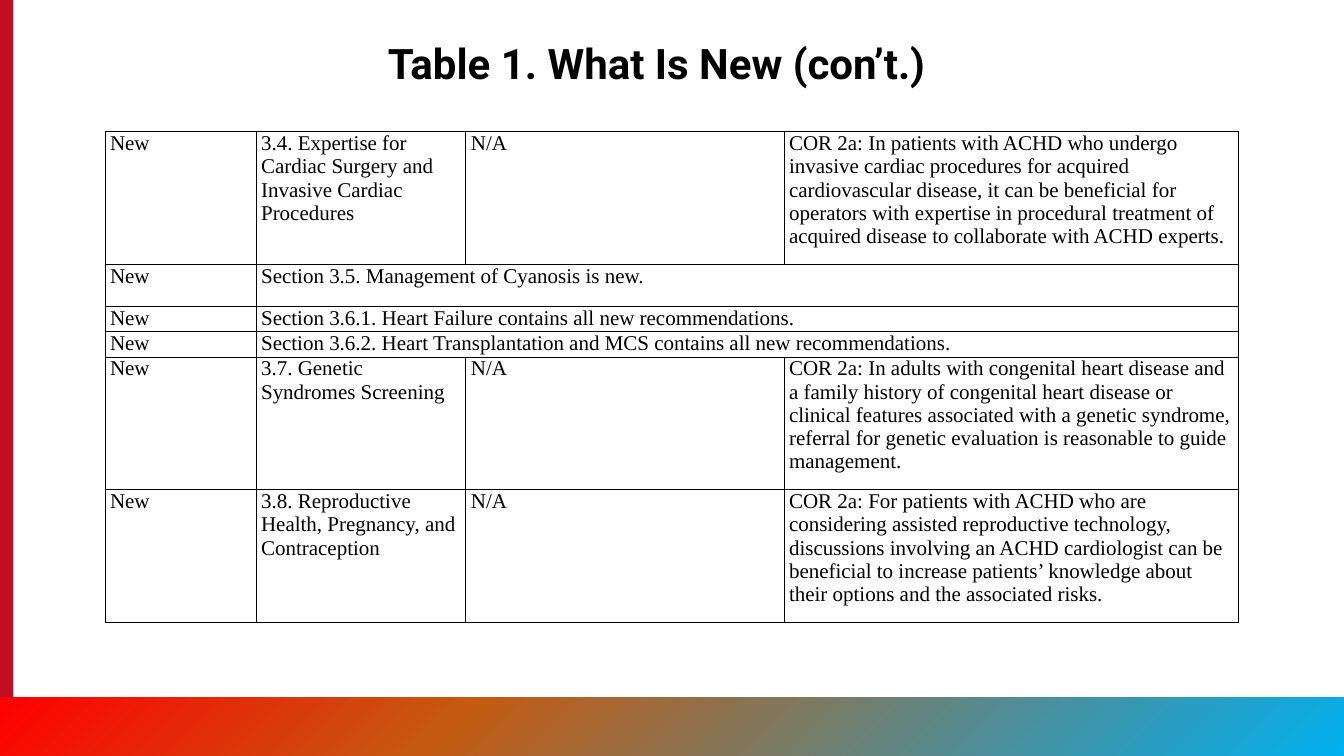
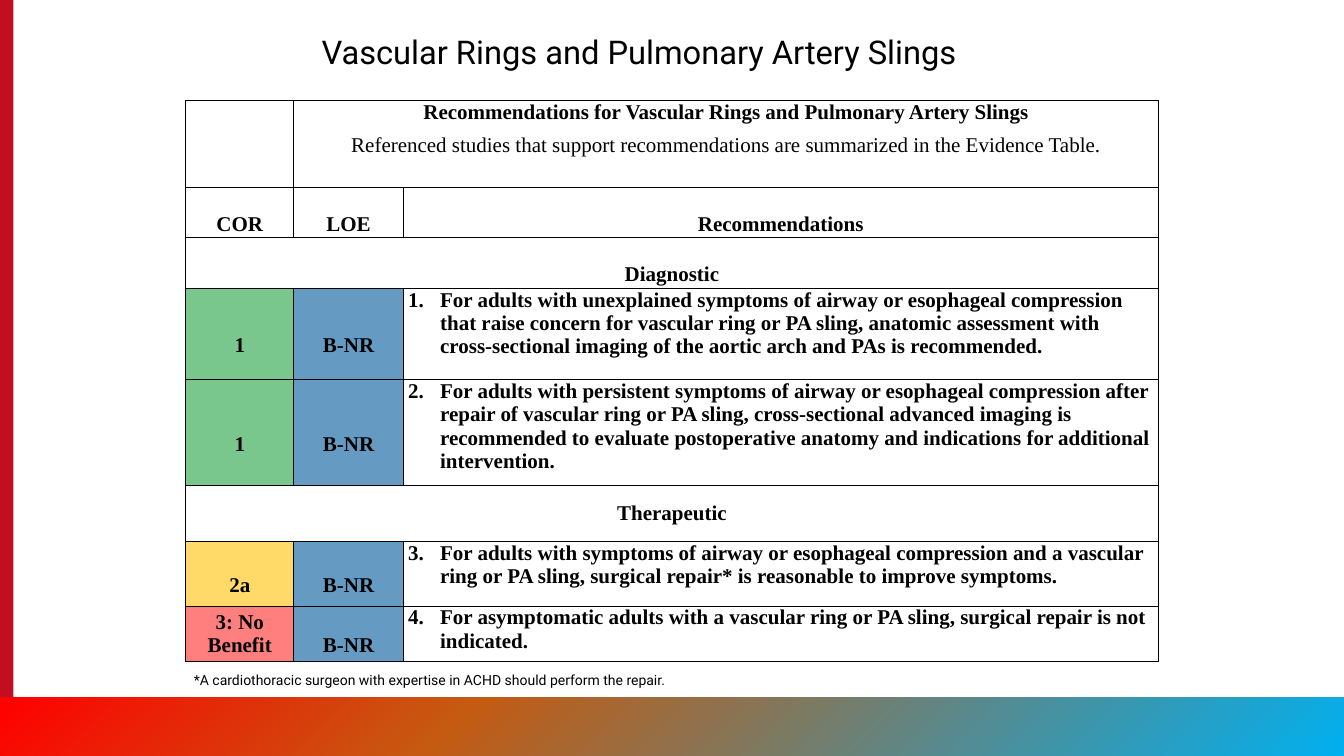
from dataclasses import dataclass

from lxml import etree
from pptx import Presentation, util as u
from pptx.dml.color import RGBColor
from pptx.enum import shapes, text
from pptx.oxml import ns


@dataclass(frozen=True)
class Theme:
    black: str = "000000"
    stripe: str = "C10E21"
    band: tuple = ((0, "FF0000"), (34, "C55A11"), (100, "00B0F0"))
    green: str = "79C78D"
    blue: str = "659BC2"
    yellow: str = "FFDA68"
    red: str = "FF7F7F"
    heading_font: str = "Roboto"
    table_font: str = "Times New Roman"
    title_size: int = 36
    subject_size: int = 28
    table_size: int = 18
    note_size: int = 12


@dataclass(frozen=True)
class Cell:
    lines: tuple = ()
    fill: str = ""
    bold: bool = False  # applies to the first line only
    centered: bool = False
    middle: bool = False
    spacing: float = 1
    number: int = 0


THEME = Theme()
COLUMNS, ROWS = 16, 9  # slide grid; every box is (column, row, width, height)
UNIT = u.Inches(1)
BAND_TOP = 8.3
STRIPE_WIDTH = 0.16


def grid(*lengths):
    return [round(length * UNIT) for length in lengths]


def add_xml(parent, tag, **attributes):
    return etree.SubElement(parent, ns.qn(tag), attributes)


def style(paragraph, font, size, bold=False):
    paragraph.font.name = font
    paragraph.font.size = u.Pt(size)
    paragraph.font.bold = bold
    paragraph.font.color.rgb = RGBColor.from_string(THEME.black)


# Shared frame: red stripe on the left, gradient band at the bottom
def add_frame(slide):
    def bar(*box):
        shape = slide.shapes.add_shape(shapes.MSO_SHAPE.RECTANGLE, *grid(*box))
        shape.shadow.inherit = False
        shape.line.fill.background()
        return shape

    stripe = bar(0, 0, STRIPE_WIDTH, ROWS)
    stripe.fill.solid()
    stripe.fill.fore_color.rgb = RGBColor.from_string(THEME.stripe)

    band = bar(0, BAND_TOP, COLUMNS, ROWS - BAND_TOP)
    band.fill.gradient()
    gradient = band.fill._xPr.find(ns.qn("a:gradFill"))
    for child in list(gradient):
        gradient.remove(child)
    stops = add_xml(gradient, "a:gsLst")
    for position, color in THEME.band:
        stop = add_xml(stops, "a:gs", pos=str(position * 1000))
        add_xml(stop, "a:srgbClr", val=color)
    add_xml(gradient, "a:lin", ang=str(45 * 60000), scaled="0")


def add_text(slide, box, words, size, bold=False, anchor=text.MSO_ANCHOR.TOP):
    frame = slide.shapes.add_textbox(*grid(*box)).text_frame
    frame.word_wrap = True
    frame.vertical_anchor = anchor
    frame.text = words
    style(frame.paragraphs[0], THEME.heading_font, size, bold)


def add_number(paragraph, number):
    properties = paragraph._p.get_or_add_pPr()
    indent = u.Inches(0.38)
    properties.set("marL", str(indent))
    properties.set("indent", str(-indent))
    add_xml(properties, "a:buFont", typeface="+mj-lt")
    add_xml(properties, "a:buAutoNum", type="arabicPeriod", startAt=str(number))


def fill_cell(target, content):
    target.margin_left = target.margin_right = u.Inches(0.06)
    target.margin_top = target.margin_bottom = 0
    target.vertical_anchor = (
        text.MSO_ANCHOR.MIDDLE if content.middle else text.MSO_ANCHOR.TOP)

    properties = target._tc.get_or_add_tcPr()
    for side in ("a:lnL", "a:lnR", "a:lnT", "a:lnB"):
        border = add_xml(properties, side, w=str(u.Pt(1)))
        add_xml(add_xml(border, "a:solidFill"), "a:srgbClr", val=THEME.black)
    if content.fill:
        target.fill.solid()
        target.fill.fore_color.rgb = RGBColor.from_string(content.fill)
    else:
        target.fill.background()

    target.text = "\n".join(content.lines)
    for index, paragraph in enumerate(target.text_frame.paragraphs):
        if content.number:
            add_number(paragraph, content.number)
        if content.centered:
            paragraph.alignment = text.PP_ALIGN.CENTER
        if content.spacing != 1:
            paragraph.line_spacing = content.spacing
        paragraph.space_after = u.Pt(8)
        style(paragraph, THEME.table_font, THEME.table_size,
              content.bold and index == 0)


# Table whose last cell in each row spans the columns left over
def add_grid_table(slide, box, widths, heights, rows):
    table = slide.shapes.add_table(len(heights), len(widths), *grid(*box)).table
    table.first_row = table.horz_banding = False
    for column, width in zip(table.columns, widths):
        column.width = round(box[2] * UNIT * width / sum(widths))
    for row, height in zip(table.rows, heights):
        row.height = round(box[3] * UNIT * height / sum(heights))

    last = len(widths) - 1
    for r, contents in enumerate(rows):
        for c in range(len(widths)):
            fill_cell(table.cell(r, c),
                      contents[c] if c < len(contents) else Cell())
        if len(contents) <= last:
            table.cell(r, len(contents) - 1).merge(table.cell(r, last))


def whats_new_slide(slide):
    add_frame(slide)
    add_text(slide, (4.52, 0.42, 6.96, 0.67), "Table 1. What Is New (con’t.)",
             THEME.title_size, bold=True, anchor=text.MSO_ANCHOR.BOTTOM)
    changes = [
        ("3.4. Expertise for Cardiac Surgery and Invasive Cardiac Procedures",
         "N/A",
         "COR 2a: In patients with ACHD who undergo invasive cardiac procedures "
         "for acquired cardiovascular disease, it can be beneficial for "
         "operators with expertise in procedural treatment of acquired disease "
         "to collaborate with ACHD experts."),
        ("Section 3.5. Management of Cyanosis is new.",),
        ("Section 3.6.1. Heart Failure contains all new recommendations.",),
        ("Section 3.6.2. Heart Transplantation and MCS contains all new "
         "recommendations.",),
        ("3.7. Genetic Syndromes Screening",
         "N/A",
         "COR 2a: In adults with congenital heart disease and a family history "
         "of congenital heart disease or clinical features associated with a "
         "genetic syndrome, referral for genetic evaluation is reasonable to "
         "guide management."),
        ("3.8. Reproductive Health, Pregnancy, and Contraception",
         "N/A",
         "COR 2a: For patients with ACHD who are considering assisted "
         "reproductive technology, discussions involving an ACHD cardiologist "
         "can be beneficial to increase patients’ knowledge about their options "
         "and the associated risks."),
    ]
    add_grid_table(slide, (1.25, 1.57, 13.5, 5.7),
                   widths=(1.8, 2.5, 3.79, 5.42),
                   heights=(1.58, 0.5, 0.23, 0.23, 1.58, 1.58),
                   rows=[[Cell((words,)) for words in ("New", *change)]
                         for change in changes])


def label(words, fill="", spacing=2):
    return Cell((words,), fill, bold=True, centered=True, middle=True,
                spacing=spacing)


def recommendation(number, cor, color, words, cor_spacing=2):
    return [label(cor, color, cor_spacing), label("B-NR", THEME.blue),
            Cell((words,), bold=True, number=number)]


def vascular_rings_slide(slide):
    add_frame(slide)
    add_text(slide, (3.73, 0.33, 8.54, 0.57),
             "Vascular Rings and Pulmonary Artery Slings", THEME.subject_size)
    heading = Cell(
        ("Recommendations for Vascular Rings and Pulmonary Artery Slings",
         "Referenced studies that support recommendations are summarized in "
         "the Evidence Table."),
        bold=True, centered=True)
    rows = [
        [Cell(), heading],
        [label(words) for words in ("COR", "LOE", "Recommendations")],
        [label("Diagnostic")],
        recommendation(
            1, "1", THEME.green,
            "For adults with unexplained symptoms of airway or esophageal "
            "compression that raise concern for vascular ring or PA sling, "
            "anatomic assessment with cross-sectional imaging of the aortic "
            "arch and PAs is recommended."),
        recommendation(
            2, "1", THEME.green,
            "For adults with persistent symptoms of airway or esophageal "
            "compression after repair of vascular ring or PA sling, "
            "cross-sectional advanced imaging is recommended to evaluate "
            "postoperative anatomy and indications for additional "
            "intervention."),
        [label("Therapeutic", spacing=1)],
        recommendation(
            3, "2a", THEME.yellow,
            "For adults with symptoms of airway or esophageal compression and "
            "a vascular ring or PA sling, surgical repair* is reasonable to "
            "improve symptoms."),
        recommendation(
            4, "3: No Benefit", THEME.red,
            "For asymptomatic adults with a vascular ring or PA sling, "
            "surgical repair is not indicated.", cor_spacing=1),
    ]
    add_grid_table(slide, (2.21, 1.2, 11.58, 6.6),
                   widths=(1.29, 1.3, 8.99),
                   heights=(1.03, 0.56, 0.56, 1.09, 1.25, 0.67, 0.77, 0.66),
                   rows=rows)
    add_text(slide, (2.21, 7.95, 8, 0.3),
             "*A cardiothoracic surgeon with expertise in ACHD should perform "
             "the repair.", THEME.note_size)


def main():
    deck = Presentation()
    deck.slide_width, deck.slide_height = grid(COLUMNS, ROWS)
    blank = deck.slide_layouts[6]
    for build in (whats_new_slide, vascular_rings_slide):
        build(deck.slides.add_slide(blank))
    deck.save("out.pptx")


if __name__ == "__main__":
    main()
